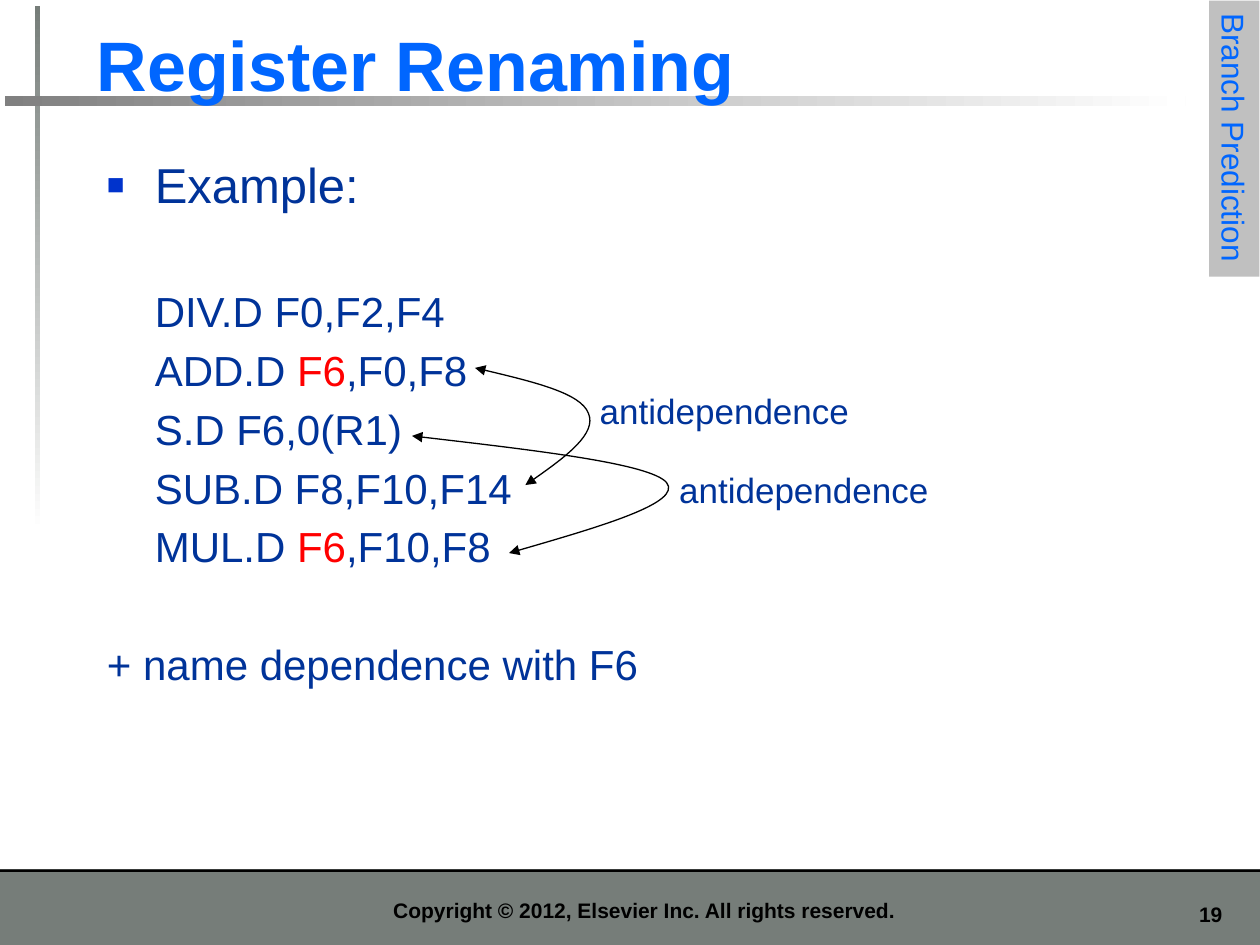
import pptx
import pptx.dml.color
import pptx.enum.shapes
import pptx.enum.text
import pptx.oxml
import pptx.oxml.ns
import pptx.util
from pptx.util import Inches

BLUE, NAVY, RED, BLACK = "0066FF", "003399", "FF0000", "000000"
ALIGN = pptx.enum.text.PP_ALIGN
ANCHOR = pptx.enum.text.MSO_ANCHOR


def color(hex_code):
    return pptx.dml.color.RGBColor.from_string(hex_code)


def element(tag, **attributes):
    made = pptx.oxml.parse_xml(f"<{tag} {pptx.oxml.ns.nsdecls('a')}/>")
    for key, value in attributes.items():
        made.set(key, value)
    return made


def add_bar(slide, box, fill, fade_angle=None):
    """Rectangle in one colour, or fading to white along fade_angle."""
    bar = slide.shapes.add_shape(
        pptx.enum.shapes.MSO_SHAPE.RECTANGLE, *map(Inches, box))
    bar.shadow.inherit = False
    bar.line.fill.background()
    if fade_angle is None:
        bar.fill.solid()
        bar.fill.fore_color.rgb = color(fill)
    else:
        bar.fill.gradient()
        bar.fill.gradient_angle = fade_angle
        for stop, shade in zip(bar.fill.gradient_stops, (fill, "FFFFFF")):
            stop.color.rgb = color(shade)
    return bar


def add_run(paragraph, text, size, hex_code, bold=False):
    run = paragraph.add_run()
    run.text = text
    run.font.name = "Arial"
    run.font.size = pptx.util.Pt(size)
    run.font.bold = bold
    run.font.color.rgb = color(hex_code)


def add_label(slide, box, text, size, hex_code, bold=False,
              align=ALIGN.LEFT, anchor=ANCHOR.TOP):
    frame = slide.shapes.add_textbox(*map(Inches, box)).text_frame
    frame.word_wrap = True
    frame.vertical_anchor = anchor
    frame.paragraphs[0].alignment = align
    add_run(frame.paragraphs[0], text, size, hex_code, bold)


def set_indent(paragraph, left, first=0):
    properties = paragraph._p.get_or_add_pPr()
    properties.set("marL", str(Inches(left)))
    properties.set("indent", str(Inches(first)))
    return properties


def add_body(slide):
    frame = slide.shapes.add_textbox(
        Inches(0.75), Inches(1.23), Inches(9.05), Inches(5.59)).text_frame
    frame.word_wrap = True

    # Bulleted heading
    heading = frame.paragraphs[0]
    properties = set_indent(heading, 0.38, -0.38)
    bullet_color = element("a:buClr")
    bullet_color.append(element("a:srgbClr", val="0033CC"))
    properties.append(bullet_color)
    properties.append(element("a:buSzPct", val="60000"))
    properties.append(element("a:buFont", typeface="Arial"))
    properties.append(element("a:buChar", char="■"))
    heading.line_spacing = 0.9
    add_run(heading, "Example:", 28, NAVY)

    # Instructions and closing remark: indent, space before, runs
    lines = [
        (0.38, 41, [("DIV.D F0,F2,F4", NAVY)]),
        (0.38, 4.8, [("ADD.D ", NAVY), ("F6", RED), (",F0,F8", NAVY)]),
        (0.38, 4.8, [("S.D F6,0(R1)", NAVY)]),
        (0.38, 4.8, [("SUB.D F8,F10,F14", NAVY)]),
        (0.38, 4.8, [("MUL.D ", NAVY), ("F6", RED), (",F10,F8", NAVY)]),
        (0, 38.5, [("+ name dependence with F6", NAVY)]),
    ]
    for indent, space, runs in lines:
        paragraph = frame.add_paragraph()
        set_indent(paragraph, indent)
        paragraph.space_before = pptx.util.Pt(space)
        for text, hex_code in runs:
            add_run(paragraph, text, 24, hex_code)


def add_curved_arrow(slide, *points):
    """Double-headed curve: a start, then three control points per Bézier."""
    start, *controls = [(Inches(x), Inches(y)) for x, y in points]
    builder = slide.shapes.build_freeform(*start)
    builder.add_line_segments(controls, close=False)
    curve = builder.convert_to_shape()
    curve.shadow.inherit = False
    curve.fill.background()
    curve.line.color.rgb = color(BLACK)
    curve.line.width = pptx.util.Pt(0.75)

    segments = curve._element.xpath(".//a:lnTo")
    for first in range(0, len(segments), 3):
        bezier = element("a:cubicBezTo")
        segments[first].addprevious(bezier)
        for segment in segments[first:first + 3]:
            bezier.append(segment[0])
            segment.getparent().remove(segment)

    line = curve.line._get_or_add_ln()
    for end in ("a:headEnd", "a:tailEnd"):
        line.append(element(end, type="triangle"))


def add_section_tab(slide):
    tab = add_bar(slide, (8.7, 0.9, 2.19, 0.4), "C0C0C0")
    tab.rotation = 90
    frame = tab.text_frame
    frame.word_wrap = False
    frame.vertical_anchor = ANCHOR.TOP
    frame.paragraphs[0].alignment = ALIGN.LEFT
    add_run(frame.paragraphs[0], "Branch Prediction", 18, BLUE)


def main():
    deck = pptx.Presentation()
    deck.slide_width, deck.slide_height = Inches(10), Inches(7.5)
    slide = deck.slides.add_slide(deck.slide_layouts[6])

    # Footer
    add_bar(slide, (0, 6.9, 10, 0.6), "767D79")
    add_bar(slide, (0, 6.9, 10, 0.02), BLACK)
    add_label(slide, (9.17, 7.11, 0.63, 0.3), "19", 12, BLACK, True,
              ALIGN.RIGHT)
    add_label(slide, (1.14, 6.98, 7.95, 0.39),
              "Copyright © 2012, Elsevier Inc. All rights reserved.",
              12, BLACK, True, ALIGN.CENTER, ANCHOR.BOTTOM)

    # Fading rules and title
    add_bar(slide, (0.28, 0.05, 0.04, 4.17), "767D79", 270)
    add_bar(slide, (0.04, 0.76, 9.37, 0.08), "808080", 0)
    add_label(slide, (0.67, 0.12, 9.06, 0.77), "Register Renaming",
              40, BLUE, True, anchor=ANCHOR.BOTTOM)

    add_body(slide)
    add_section_tab(slide)

    # Dependences between instructions
    add_curved_arrow(slide, (3.77, 2.92),
                     (4.19, 3.02), (4.61, 3.12), (4.67, 3.28),
                     (4.74, 3.44), (4.46, 3.65), (4.17, 3.85))
    add_curved_arrow(slide, (3.27, 3.46),
                     (4.21, 3.57), (5.16, 3.68), (5.29, 3.83),
                     (5.42, 3.99), (4.73, 4.19), (4.04, 4.39))
    for left, top in ((4.61, 3.04), (5.24, 3.67)):
        add_label(slide, (left, top, 2.28, 0.44), "antidependence",
                  20, NAVY, align=ALIGN.CENTER)

    deck.save("out.pptx")


if __name__ == "__main__":
    main()
